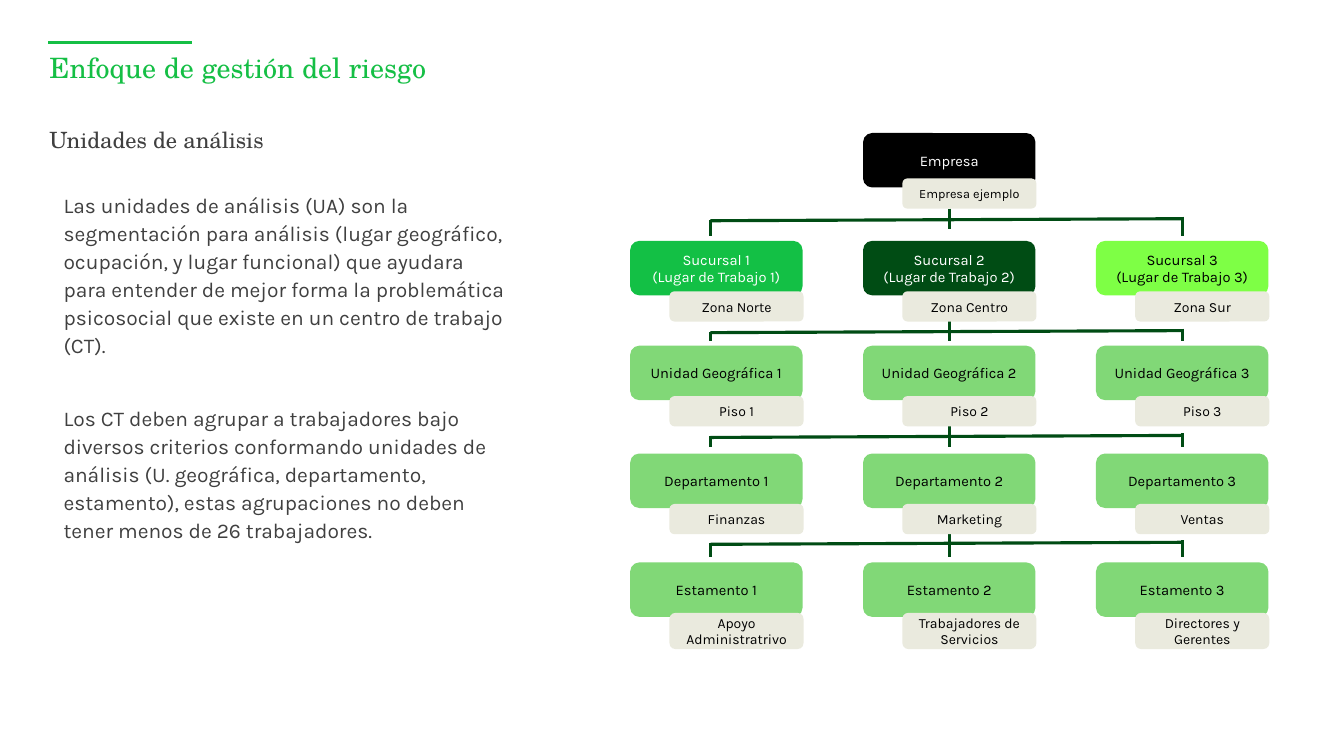
import pptx
import pptx.util
import pptx.dml.color
import pptx.enum.shapes
import pptx.enum.text
import pptx.oxml.ns
import lxml.etree

Inches = pptx.util.Inches
RGB = pptx.dml.color.RGBColor
ALIGN = pptx.enum.text.PP_ALIGN
ANCHOR = pptx.enum.text.MSO_ANCHOR

GREEN = RGB(0x15, 0xBF, 0x45)
MID = RGB(0x13, 0xC0, 0x45)
DARK = RGB(0x00, 0x4C, 0x14)
LIME = RGB(0x7E, 0xFF, 0x45)
PALE = RGB(0x81, 0xD8, 0x77)
SAND = RGB(0xEA, 0xEA, 0xDE)
GREY = RGB(0x40, 0x40, 0x40)
BLACK = RGB(0, 0, 0)
WHITE = RGB(0xFF, 0xFF, 0xFF)

SANS = "Karla"
SERIF = "TeX Gyre Schola"

BOX_W, BOX_H = 1.71, 0.54
TAG_W, TAG_H = 1.33, 0.3
COL_GAP = 2.31

BODY = [
    "Las unidades de análisis (UA) son la segmentación para análisis "
    "(lugar geográfico, ocupación, y lugar funcional) que ayudara para "
    "entender de mejor forma la problemática psicosocial que existe en un "
    "centro de trabajo (CT).",
    "Los CT deben agrupar a trabajadores bajo diversos criterios conformando "
    "unidades de análisis (U. geográfica, departamento, estamento), estas "
    "agrupaciones no deben tener menos de 26 trabajadores.",
]

# Top of row, tag height, label, tags, fills, text colours
ROWS = [
    (1.07, TAG_H, "Sucursal {0}\n(Lugar de Trabajo {0})",
     ["Zona Norte", "Zona Centro", "Zona Sur"],
     [MID, DARK, LIME], [WHITE, WHITE, BLACK]),
    (2.11, TAG_H, "Unidad Geográfica {0}",
     ["Piso 1", "Piso 2", "Piso 3"], [PALE] * 3, [BLACK] * 3),
    (3.18, TAG_H, "Departamento {0}",
     ["Finanzas", "Marketing", "Ventas"], [PALE] * 3, [BLACK] * 3),
    (4.26, 0.36, "Estamento {0}",
     ["Apoyo Administratrivo", "Trabajadores de Servicios",
      "Directores y Gerentes"], [PALE] * 3, [BLACK] * 3),
]

# Top of stem, length of stem, end of side legs
FORKS = [(0.75, 0.2, 1.02), (1.86, 0.2, 2.06),
         (2.9, 0.21, 3.11), (3.96, 0.25, 4.21)]


def write(frame, text, size=10.5, font=SANS, color=BLACK, align=ALIGN.LEFT,
          anchor=ANCHOR.TOP, inset=None, lead=None, gap=0):
    """Fill a text frame, one paragraph per line of text."""
    frame.word_wrap = True
    frame.auto_size = pptx.enum.text.MSO_AUTO_SIZE.NONE
    frame.vertical_anchor = anchor
    if inset is not None:
        frame.margin_left = frame.margin_right = Inches(inset)
        frame.margin_top = frame.margin_bottom = Inches(inset)
    frame.text = text
    for i, para in enumerate(frame.paragraphs):
        props = para._p.get_or_add_pPr()
        props.set("marL", "0")
        props.set("indent", "0")
        lxml.etree.SubElement(props, pptx.oxml.ns.qn("a:buNone"))
        para.alignment = align
        para.space_before = pptx.util.Pt(gap if i else 0)
        if lead:
            para.line_spacing = lead
        para.font.size = pptx.util.Pt(size)
        para.font.name = font
        para.font.color.rgb = color


def place(shape, left, top, width, height):
    shape.left, shape.top = Inches(left), Inches(top)
    shape.width, shape.height = Inches(width), Inches(height)


def line(slide, x1, y1, x2, y2, color=DARK, width=2.25):
    link = slide.shapes.add_connector(
        pptx.enum.shapes.MSO_CONNECTOR.STRAIGHT,
        Inches(x1), Inches(y1), Inches(x2), Inches(y2))
    link.line.color.rgb = color
    link.line.width = pptx.util.Pt(width)
    lxml.etree.SubElement(link._element.spPr,
                          pptx.oxml.ns.qn("a:effectLst"))


def block(slide, left, top, width, height, text, fill, **style):
    shape = slide.shapes.add_shape(
        pptx.enum.shapes.MSO_SHAPE.ROUNDED_RECTANGLE,
        Inches(left), Inches(top), Inches(width), Inches(height))
    shape.shadow.inherit = False
    shape.fill.solid()
    shape.fill.fore_color.rgb = fill
    shape.line.fill.background()
    write(shape.text_frame, text, align=ALIGN.CENTER, anchor=ANCHOR.MIDDLE,
          **style)


def unit(slide, left, top, label, tag, fill, color, drop=0.5, high=TAG_H,
         size=10):
    """Draw a box with its sample tag over the lower right corner."""
    block(slide, left, top, BOX_W, BOX_H, label, fill, color=color)
    block(slide, left + 0.39, top + drop, TAG_W, high, tag, SAND, size=size)


def fork(slide, mid, top, stem, end):
    """Draw a stem that branches to the outer columns."""
    left, right, bar = mid - 2.37, mid + 2.31, top + 0.12
    line(slide, mid, top, mid, top + stem)
    line(slide, right, bar - 0.02, left, bar)
    line(slide, left, bar - 0.01, left, end)
    line(slide, right, bar - 0.04, right, end)


def tree(slide, left, top):
    unit(slide, left + COL_GAP, top, "Empresa", "Empresa ejemplo",
         BLACK, WHITE, drop=0.45, size=9)
    mid = left + COL_GAP + BOX_W / 2
    for start, stem, end in FORKS:
        fork(slide, mid, top + start, stem, top + end)
    for y, high, label, tags, fills, colors in ROWS:
        for i, (tag, fill, color) in enumerate(zip(tags, fills, colors)):
            unit(slide, left + i * COL_GAP, top + y, label.format(i + 1),
                 tag, fill, color, high=high)


def heads(slide, left, top, width):
    line(slide, left - 0.01, top, left + 1.41, top, GREEN, 1.75)
    title, sub = slide.shapes.title, slide.placeholders[1]
    place(title, left, top + 0.12, width, 0.57)
    write(title.text_frame, "Enfoque de gestión del riesgo", size=20,
          font=SERIF, color=GREEN, inset=0, lead=0.9)
    place(sub, left, top + 0.86, width, 0.39)
    write(sub.text_frame, "Unidades de análisis", size=16,
          font=SERIF, color=GREY, inset=0, lead=0.9)


def prose(slide, left, top, width, height):
    body = slide.placeholders[2]
    place(body, left, top, width, height)
    write(body.text_frame, "\n".join(BODY), size=15, color=GREY,
          lead=pptx.util.Pt(20), gap=32)


def main():
    deck = pptx.Presentation()
    deck.slide_width, deck.slide_height = Inches(13.33), Inches(7.5)
    slide = deck.slides.add_slide(deck.slide_layouts[3])
    heads(slide, 0.49, 0.42, 10.79)
    prose(slide, 0.53, 1.83, 4.6, 3.94)
    tree(slide, 6.25, 1.32)
    deck.save("out.pptx")


if __name__ == "__main__":
    main()
